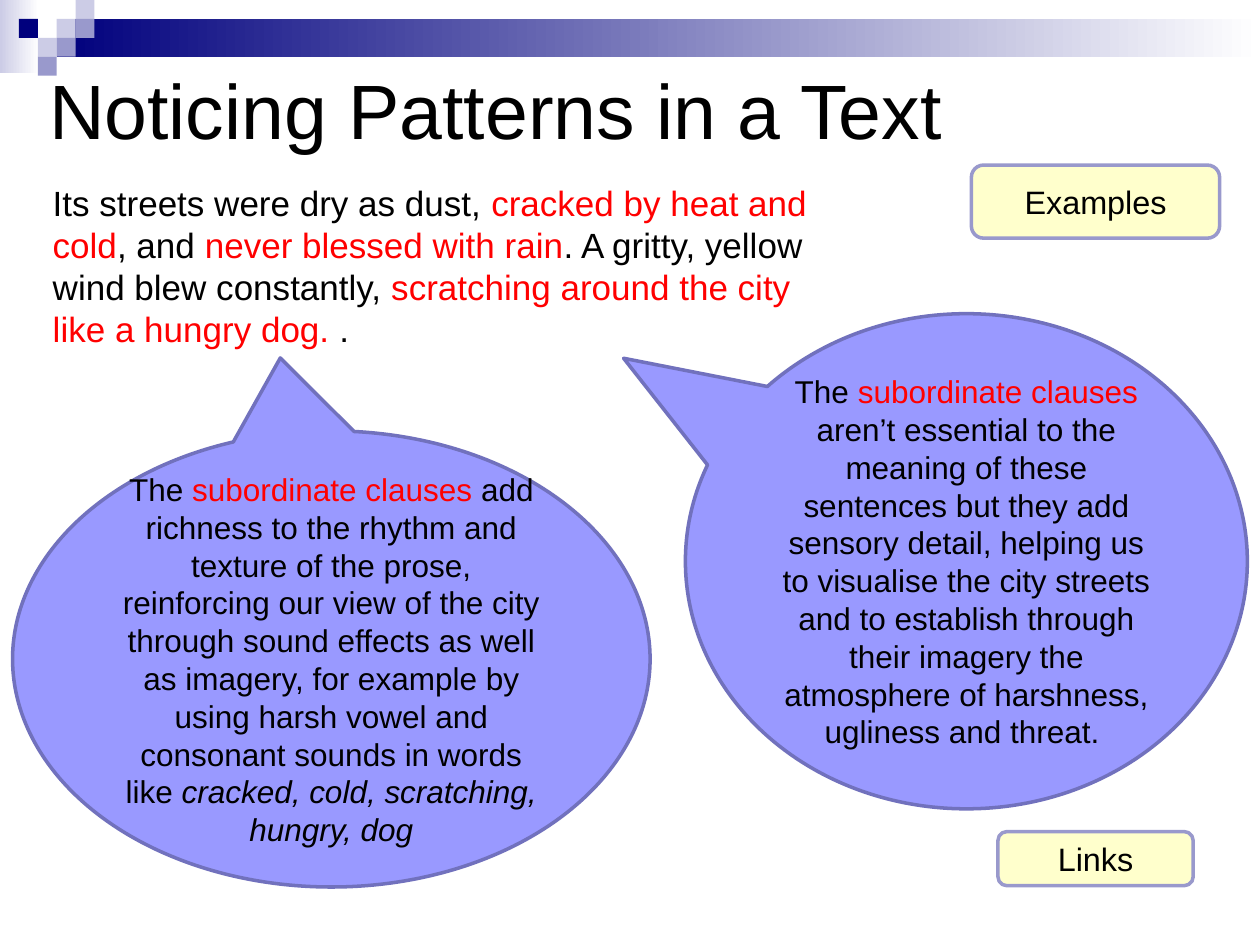
"""Build the slide on noticing patterns in a text."""
from dataclasses import dataclass
from typing import NamedTuple

from pptx import Presentation
from pptx.dml.color import RGBColor
from pptx.enum.shapes import MSO_SHAPE
from pptx.enum.text import MSO_ANCHOR, MSO_AUTO_SIZE, PP_ALIGN
from pptx.util import Inches, Pt

RECT, ROUND = MSO_SHAPE.RECTANGLE, MSO_SHAPE.ROUNDED_RECTANGLE
CALLOUT = MSO_SHAPE.OVAL_CALLOUT
MIDDLE, TOP = MSO_ANCHOR.MIDDLE, MSO_ANCHOR.TOP
LEFT, CENTER = PP_ALIGN.LEFT, PP_ALIGN.CENTER
NO_FIT = MSO_AUTO_SIZE.NONE

WIDTH, HEIGHT = Inches(10), Inches(7.5)
CELL_W, CELL_H = 1.5, 2
FONT = "Arial"
COLORS = {
    "text": "000000", "clause": "FF0000", "white": "FFFFFF",
    "navy": "00007D", "mid": "9999CC", "pale": "CCCCE6",
    "button": "FFFFCC", "bubble": "9999FF", "bubble_line": "7171BD",
}


class Box(NamedTuple):
    """Left, top, width and height in percent of the slide."""
    x: float
    y: float
    w: float
    h: float

    def emu(self) -> tuple[int, ...]:
        return tuple(round(share * side / 100)
                     for share, side in zip(self, (WIDTH, HEIGHT) * 2))


class Run(NamedTuple):
    text: str
    color: str = "text"
    italic: bool = False


class Square(NamedTuple):
    col: int
    row: int
    color: str


@dataclass
class Panel:
    """A filled, outlined shape with centred text."""
    kind: int
    box: Box
    fill: str
    line: str
    size: float
    runs: list[Run]
    tip: tuple[float, ...] = ()


FADES = [
    (Box(0, 0, 3.1, 7.73), "pale"),
    (Box(3 * CELL_W, CELL_H, 95.5, 4), "navy"),
]
SQUARES = [
    Square(3, 1, "pale"), Square(4, 0, "pale"), Square(4, 1, "mid"),
    Square(2, 2, "pale"), Square(1, 1, "navy"), Square(3, 2, "mid"),
    Square(2, 3, "mid"),
]
EXTRACT = [
    Run("Its streets were dry as dust, "),
    Run("cracked by heat and cold", "clause"),
    Run(", and "),
    Run("never blessed with rain", "clause"),
    Run(". A gritty, yellow wind blew constantly, "),
    Run("scratching around the city like a hungry dog.", "clause"),
    Run(" ."),
]
OPENING = [Run("The "), Run("subordinate clauses ", "clause")]
PANELS = [
    Panel(ROUND, Box(77.1, 17.47, 19.7, 7.73), "button", "mid", 18.5, [Run("Examples")]),
    Panel(ROUND, Box(79.2, 88, 15.5, 5.73), "button", "mid", 18.5, [Run("Links")]),
    Panel(CALLOUT, Box(54.4, 33.2, 44.6, 52.4), "bubble", "bubble_line", 18, OPENING + [
        Run("aren’t essential to the meaning of these sentences but they add "
            "sensory detail, helping us to visualise the city streets and to "
            "establish through their imagery the atmosphere of harshness, "
            "ugliness and threat. ")], (-0.61, -0.41)),
    Panel(CALLOUT, Box(1, 45.6, 50.6, 48.27), "bubble", "bubble_line", 18, OPENING + [
        Run("add richness to the rhythm and texture of the prose, reinforcing "
            "our view of the city through sound effects as well as imagery, "
            "for example by using harsh vowel and consonant sounds in words like "),
        Run("cracked, cold, scratching, hungry, dog", italic=True)], (-0.08, -0.66)),
]


def rgb(name: str) -> RGBColor:
    return RGBColor.from_string(COLORS[name])


def write(sp, runs: list[Run], size: float, align, anchor) -> None:
    """Fill a shape with one paragraph of coloured runs."""
    tf = sp.text_frame
    tf.word_wrap, tf.auto_size, tf.vertical_anchor = True, NO_FIT, anchor
    p = tf.paragraphs[0]
    p.alignment, p.font.name, p.font.size = align, FONT, Pt(size)
    for run in runs:
        r = p.add_run()
        r.text = run.text
        r.font.color.rgb = rgb(run.color)
        if run.italic:
            r.font.italic = True


def add_plain(s, kind, box: Box):
    """Add a shape without shadow or outline."""
    sp = s.shapes.add_shape(kind, *box.emu())
    sp.shadow.inherit = False
    sp.line.fill.background()
    return sp


def add_solid(s, kind, box: Box, color: str):
    sp = add_plain(s, kind, box)
    sp.fill.solid()
    sp.fill.fore_color.rgb = rgb(color)
    return sp


def add_fade(s, box: Box, color: str) -> None:
    """Add a rectangle that fades to white from left to right."""
    fill = add_plain(s, RECT, box).fill
    fill.gradient()
    fill.gradient_angle = 0
    for stop, name in zip(fill.gradient_stops, (color, "white")):
        stop.color.rgb = rgb(name)


def add_panel(s, panel: Panel) -> None:
    sp = add_solid(s, panel.kind, panel.box, panel.fill)
    sp.line.color.rgb = rgb(panel.line)
    sp.line.width = Pt(2)
    for i, value in enumerate(panel.tip):
        sp.adjustments[i] = value
    write(sp, panel.runs, panel.size, CENTER, MIDDLE)


def main() -> None:
    prs = Presentation()
    prs.slide_width, prs.slide_height = WIDTH, HEIGHT
    s = prs.slides.add_slide(prs.slide_layouts[5])
    for box, color in FADES:
        add_fade(s, box, color)
    for col, row, color in SQUARES:
        add_solid(s, RECT, Box(col * CELL_W, row * CELL_H, CELL_W, CELL_H), color)

    title = s.shapes.title
    title.left, title.top, title.width, title.height = Box(2.9, 2.27, 90, 18.4).emu()
    write(title, [Run("Noticing Patterns in a Text")], 44, LEFT, MIDDLE)
    s.shapes.element.append(title.element)

    extract = s.shapes.add_textbox(*Box(3.2, 18.53, 64.8, 19.33).emu())
    write(extract, EXTRACT, 20, LEFT, TOP)
    for panel in PANELS:
        add_panel(s, panel)
    prs.save("out.pptx")


if __name__ == "__main__":
    main()
